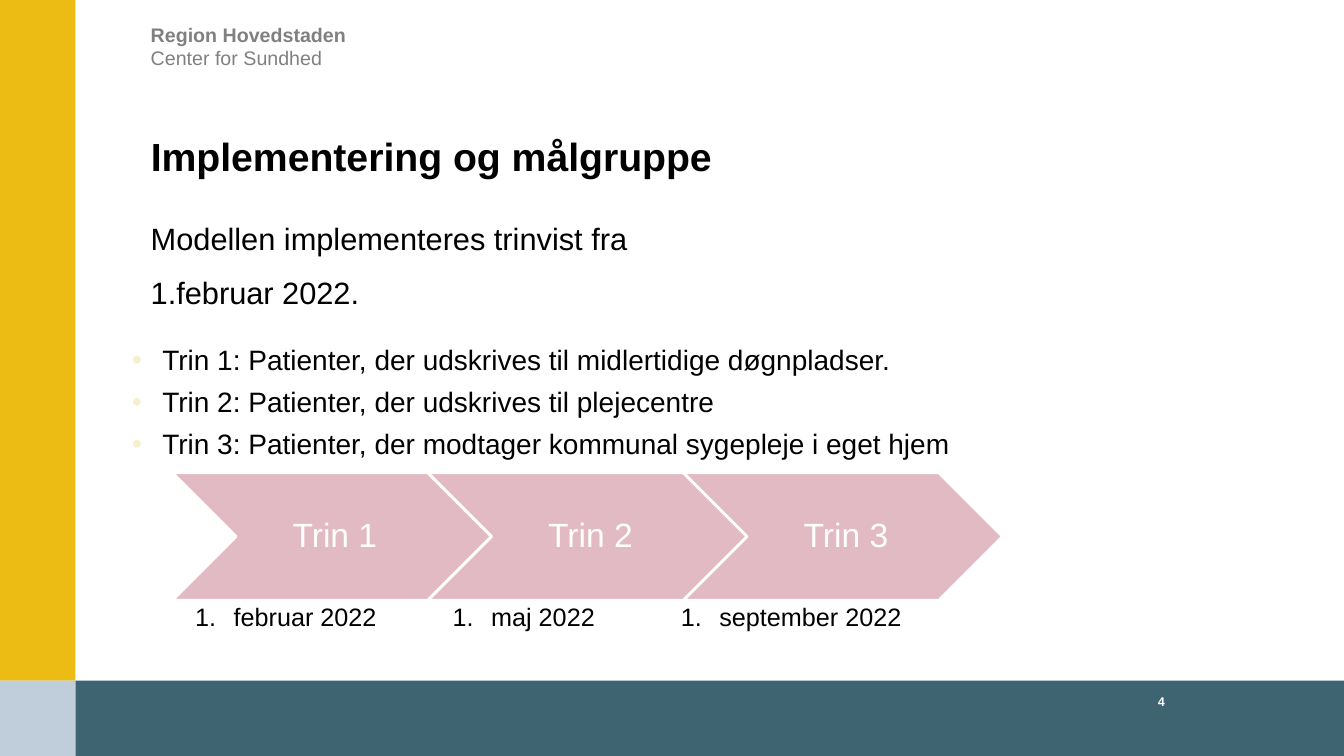
from lxml import etree
from pptx import Presentation
from pptx import util as u
from pptx.dml.color import RGBColor
from pptx.enum import shapes, text
from pptx.oxml.ns import qn

COLORS = {
    "yellow": "ECBB14", "teal": "3E6371", "mist": "C0CEDB", "rose": "E2BAC3",
    "bullet": "F7F0CB", "grey": "808080", "black": "000000", "white": "FFFFFF",
}
STEPS = [
    ("Trin 1", "Patienter, der udskrives til midlertidige døgnpladser.", "februar 2022"),
    ("Trin 2", "Patienter, der udskrives til plejecentre", "maj 2022"),
    ("Trin 3", "Patienter, der modtager kommunal sygepleje i eget hjem", "september 2022"),
]


def color(name):
    return RGBColor.from_string(COLORS[name])


def prepare(frame, anchor=text.MSO_ANCHOR.TOP, margins=(0, 0, 0, 0)):
    frame.word_wrap = True
    frame.auto_size = text.MSO_AUTO_SIZE.NONE
    frame.vertical_anchor = anchor
    (frame.margin_left, frame.margin_top,
     frame.margin_right, frame.margin_bottom) = map(u.Cm, margins)


def style(para, size, tint="black", bold=False, after=0):
    para.space_before = u.Pt(0)
    para.space_after = u.Pt(after)
    para.font.name = "Arial"
    para.font.size = u.Pt(size)
    para.font.bold = bold
    para.font.color.rgb = color(tint)


def add_mark(para, indent, tag, tint=None, **attributes):
    """Give a paragraph a hanging bullet or number."""
    props = para._p.get_or_add_pPr()
    props.set("marL", str(u.Cm(indent)))
    props.set("indent", str(-u.Cm(indent)))
    if tint:
        fill = etree.SubElement(props, qn("a:buClr"))
        etree.SubElement(fill, qn("a:srgbClr"), val=COLORS[tint])
    etree.SubElement(props, qn("a:buFont"), typeface="Arial")
    etree.SubElement(props, qn(tag), **attributes)


def add_text(page, box, lines, size, mark=None, **look):
    frame = page.shapes.add_textbox(*map(u.Cm, box)).text_frame
    prepare(frame)
    for index, line in enumerate(lines):
        para = frame.add_paragraph() if index else frame.paragraphs[0]
        para.text = line
        if mark:
            add_mark(para, **mark)
        style(para, size, **look)
    return frame


def add_block(page, kind, box, fill):
    block = page.shapes.add_shape(kind, *map(u.Cm, box))
    block.shadow.inherit = False
    block.fill.solid()
    block.fill.fore_color.rgb = color(fill)
    block.line.fill.background()
    return block


def add_frame(page, width, height, band):
    """Coloured side and bottom bands."""
    rectangle = shapes.MSO_SHAPE.RECTANGLE
    floor = height - band
    add_block(page, rectangle, (band, floor, width - band, band), "teal")
    add_block(page, rectangle, (0, 0, band, floor), "yellow")
    add_block(page, rectangle, (0, floor, band, band), "mist")


def add_sender(page, left, top, width):
    add_text(page, (left, top, width, 0.6), ["Region Hovedstaden"], 14, tint="grey", bold=True)
    add_text(page, (left, top + 0.59, width, 1.17), ["Center for Sundhed"], 14, tint="grey")


def add_title(page, box):
    title = page.shapes.title
    title.left, title.top, title.width, title.height = map(u.Cm, box)
    prepare(title.text_frame, text.MSO_ANCHOR.BOTTOM)
    para = title.text_frame.paragraphs[0]
    para.text = "Implementering og målgruppe"
    para.alignment = text.PP_ALIGN.LEFT
    para.line_spacing = 0.85
    style(para, 28, bold=True)


def add_page_number(page, box):
    frame = add_text(page, box, ["4"], 9, tint="white", bold=True)
    frame.paragraphs[0].alignment = text.PP_ALIGN.CENTER


def add_timeline(page, left, top, pitch):
    """Chevrons, one per step, with the start date under each."""
    date_lefts = (0.58, 0.63, -0.06)
    number = dict(indent=0.97, tag="a:buAutoNum", type="arabicPeriod")
    for index, ((name, _, date), offset) in enumerate(zip(STEPS, date_lefts)):
        start = left + index * pitch
        chevron = add_block(page, shapes.MSO_SHAPE.CHEVRON, (start, top, 8.05, 3.22), "rose")
        chevron.line.color.rgb = color("white")
        chevron.line.width = u.Pt(2)
        prepare(chevron.text_frame, text.MSO_ANCHOR.MIDDLE, (0.25, 0.1, 0.1, 0.1))
        para = chevron.text_frame.paragraphs[0]
        para.text = name
        para.alignment = text.PP_ALIGN.CENTER
        para.line_spacing = 0.9
        style(para, 24, tint="white")
        add_text(page, (start + offset, top + 3.25, 6.4, 1.19), [date], 18, mark=number)


def build_slide(deck, width, height):
    page = deck.slides.add_slide(deck.slide_layouts[5])
    margin = 3.8
    add_frame(page, width, height, band=1.9)
    add_sender(page, margin, 0.58, 14.3)
    add_title(page, (margin, 2.21, 26.42, 2.31))
    add_page_number(page, (28.32, 17.48, 1.9, 0.51))
    add_text(page, (margin, 5.54, 13.5, 2.7),
             ["Modellen implementeres trinvist fra", "1.februar 2022."], 22, after=12)
    add_timeline(page, 4.34, 11.91, pitch=6.44)
    bullet = dict(indent=0.76, tag="a:buChar", tint="bullet", char="•")
    add_text(page, (3.33, 8.64, 29.54, 3.2),
             [f"{name}: {group}" for name, group, _ in STEPS], 20, mark=bullet, after=6)


def main():
    width, height = 33.87, 19.05
    deck = Presentation()
    deck.slide_width, deck.slide_height = u.Cm(width), u.Cm(height)
    build_slide(deck, width, height)
    deck.save("out.pptx")


if __name__ == "__main__":
    main()
